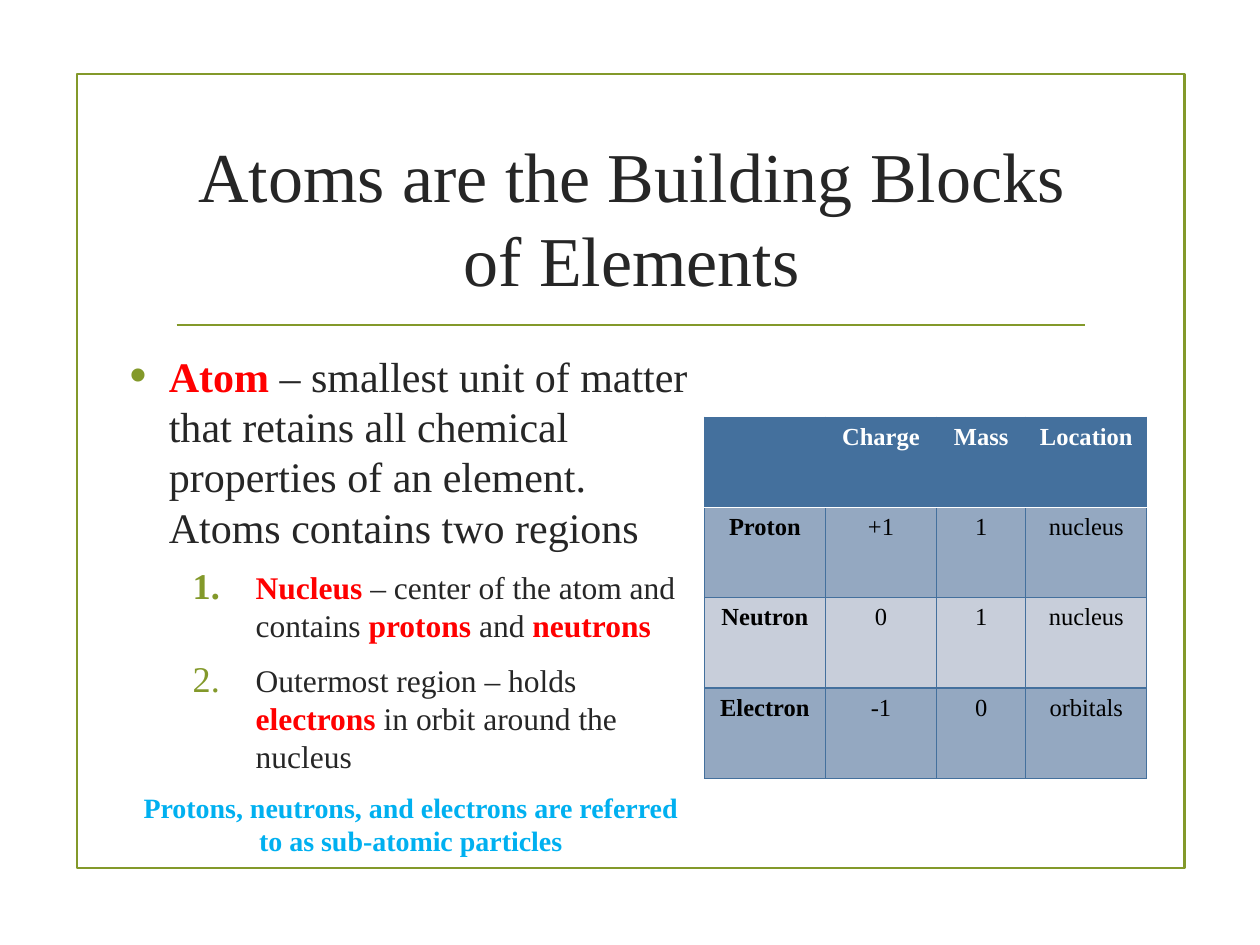
from lxml import etree
from pptx import Presentation
from pptx.dml.color import RGBColor
from pptx.enum.shapes import MSO_CONNECTOR, MSO_SHAPE
from pptx.enum.text import MSO_ANCHOR, MSO_AUTO_SIZE, PP_ALIGN
from pptx.oxml.ns import qn
from pptx.util import Cm, Pt

CENTER, LEFT = PP_ALIGN.CENTER, PP_ALIGN.LEFT
MIDDLE, TOP = MSO_ANCHOR.MIDDLE, MSO_ANCHOR.TOP
NO_FIT = MSO_AUTO_SIZE.NONE
RECT, STRAIGHT = MSO_SHAPE.RECTANGLE, MSO_CONNECTOR.STRAIGHT


def rgb(color):
    return RGBColor.from_string(color)


def add(parent, tag, **attrs):
    child = etree.SubElement(parent, qn(tag))
    for name, value in attrs.items():
        child.set(name, str(value))
    return child


class Deck:
    FONT = "Times New Roman"
    GREEN, INK, RED, SKY = "83992A", "262626", "FF0000", "00B0F0"
    BLUE, BAND, PALE = "44709D", "94A8C1", "C8CEDA"
    WHITE, BLACK = "FFFFFF", "000000"

    def __init__(self, width, height):
        self.prs = Presentation()
        self.prs.slide_width, self.prs.slide_height = Cm(width), Cm(height)
        self.s = self.prs.slides.add_slide(self.prs.slide_layouts[1])

    def place(self, sp, box, anchor):
        sp.left, sp.top, sp.width, sp.height = (Cm(v) for v in box)
        tf = sp.text_frame
        tf.word_wrap, tf.auto_size, tf.vertical_anchor = True, NO_FIT, anchor
        return tf

    def style(self, p, size, color=None, bold=None, align=CENTER):
        p.alignment = align
        p.font.name, p.font.size, p.font.bold = self.FONT, Pt(size), bold
        if color:
            p.font.color.rgb = rgb(color)

    def frame(self, *box):
        sp = self.s.shapes.add_shape(RECT, *(Cm(v) for v in box))
        sp.shadow.inherit = False
        sp.fill.background()
        sp.line.color.rgb, sp.line.width = rgb(self.GREEN), Pt(1.25)

    def rule(self, x1, x2, y):
        line = self.s.shapes.add_connector(STRAIGHT, Cm(x1), Cm(y), Cm(x2), Cm(y))
        line.line.color.rgb, line.line.width = rgb(self.GREEN), Pt(1.25)
        add(line._element.spPr, "a:effectLst")

    def title(self, text, *box):
        tf = self.place(self.s.shapes.title, box, MIDDLE)
        tf.text = text
        self.style(tf.paragraphs[0], 40, self.INK)

    def bullet(self, p, kind, margin, hanging):
        pPr = p._p.get_or_add_pPr()
        pPr.set("marL", str(Cm(margin)))
        pPr.set("indent", str(-Cm(hanging)))
        if kind == "none":
            add(pPr, "a:buNone")
            return
        add(add(pPr, "a:buClr"), "a:srgbClr", val=self.GREEN)
        add(pPr, "a:buSzPct", val=115000)
        if kind == "number":
            add(pPr, "a:buFont", typeface=self.FONT)
            add(pPr, "a:buAutoNum", type="arabicPeriod")
        else:
            add(pPr, "a:buFont", typeface="Arial")
            add(pPr, "a:buChar", char="•")

    def body(self, items, *box):
        """Each item is (kind, size, text); *starred* words are key terms."""
        layout = {"dot": (0, 0.79, 0.79), "number": (1, 2.54, 1.27), "none": (0, 0, 0)}
        tf = self.place(self.s.placeholders[1], box, TOP)
        for i, (kind, size, text) in enumerate(items):
            p = tf.add_paragraph() if i else tf.paragraphs[0]
            level, margin, hanging = layout[kind]
            p.level = level
            self.bullet(p, kind, margin, hanging)
            p.space_before, p.space_after = Pt(size * 0.2 if i else 0), Pt(6)
            self.style(p, size, align=CENTER if kind == "none" else LEFT)
            for j, part in enumerate(text.split("*")):
                if part:
                    key = j % 2 == 1
                    r = p.add_run()
                    r.text, r.font.bold = part, key
                    color = self.SKY if kind == "none" else self.RED
                    r.font.color.rgb = rgb(color if key else self.INK)

    def borders(self, cell, **white):
        tcPr = cell._tc.get_or_add_tcPr()
        for side in "LRTB":
            color, width = (self.WHITE, 1.25) if white.get(side) else (self.BLUE, 0.75)
            ln = add(tcPr, "a:ln" + side, w=Pt(width))
            add(add(ln, "a:solidFill"), "a:srgbClr", val=color)

    def table(self, rows, widths, row_height, left, top):
        shape = self.s.shapes.add_table(
            len(rows), len(widths), Cm(left), Cm(top),
            Cm(sum(widths)), Cm(row_height * len(rows)))
        table = shape.table
        for column, width in zip(table.columns, widths):
            column.width = Cm(width)
        for i, row in enumerate(rows):
            fill = self.BLUE if i == 0 else self.BAND if i % 2 else self.PALE
            for j, text in enumerate(row):
                cell = table.cell(i, j)
                self.borders(cell, T=i == 1, B=i == 0)
                cell.fill.solid()
                cell.fill.fore_color.rgb = rgb(fill)
                cell.text = text
                self.style(cell.text_frame.paragraphs[0], 14,
                           self.BLACK if i else self.WHITE, i == 0 or j == 0)


def main():
    deck = Deck(25.4, 19.05)

    # Border and title
    deck.frame(1.55, 1.5, 22.33, 16)
    deck.rule(3.56, 21.87, 6.55)
    deck.title("Atoms are the Building Blocks of Elements", 3.28, 2.54, 18.9, 3.63)

    # Definitions
    deck.body([
        ("dot", 24, "*Atom* – smallest unit of matter that retains all chemical "
                    "properties of an element. Atoms contains two regions"),
        ("number", 18, "*Nucleus* – center of the atom and contains "
                       "*protons* and *neutrons*"),
        ("number", 18, "Outermost region – holds *electrons* in orbit around the nucleus"),
        ("none", 16, "*Protons, neutrons, and electrons are referred to as "
                     "sub-atomic particles*"),
    ], 2.36, 6.93, 11.84, 9.58)

    # Particle table
    deck.table([
        ("", "Charge", "Mass", "Location"),
        ("Proton", "+1", "1", "nucleus"),
        ("Neutron", "0", "1", "nucleus"),
        ("Electron", "-1", "0", "orbitals"),
    ], (2.44, 2.24, 1.8, 2.44), 1.82, 14.2, 8.41)

    deck.prs.save("out.pptx")


if __name__ == "__main__":
    main()
